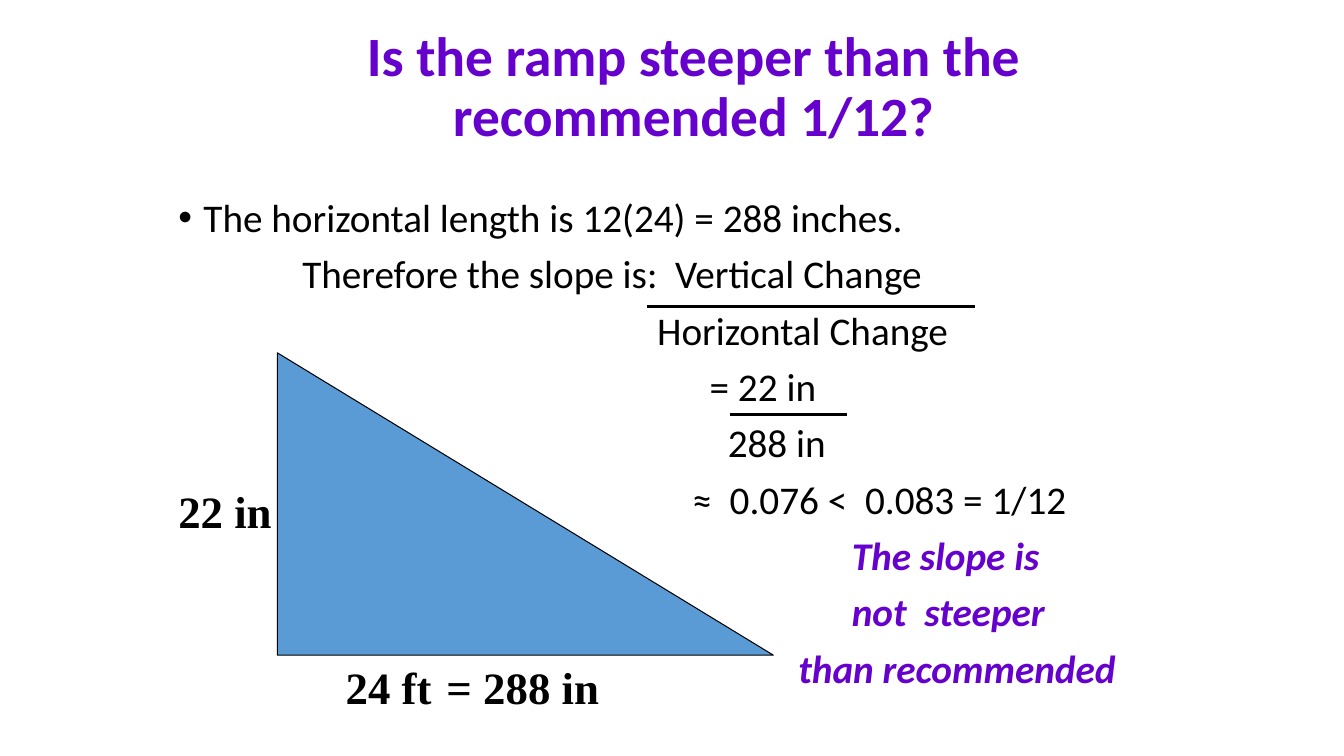
from lxml import etree
from pptx import Presentation
from pptx.dml.color import RGBColor
from pptx.enum.shapes import MSO_CONNECTOR as Connector, MSO_SHAPE as Shape
from pptx.enum.text import MSO_ANCHOR as Anchor, MSO_AUTO_SIZE as AutoSize, PP_ALIGN as Align
from pptx.oxml.ns import qn
from pptx.util import Inches, Pt

PURPLE = RGBColor(0x66, 0x00, 0xCC)
BLUE = RGBColor(0x5B, 0x9B, 0xD5)
BLACK = RGBColor(0x00, 0x00, 0x00)

WORKING = [
    (1.23, "Therefore the slope is:  Vertical Change"),
    (4.75, "Horizontal Change"),
    (5.27, "= 22 in"),
    (5.45, "288 in"),
    (5.1, "≈  0.076 <  0.083 = 1/12"),
]
CONCLUSION = [
    (6.68, "The slope is"),
    (6.68, "not  steeper"),
    (6.15, "than recommended"),
]


def set_font(paragraph, name, size, color, bold=False, italic=False):
    """Format all the text of one paragraph."""
    font = paragraph.font
    font.name, font.size = name, Pt(size)
    font.bold, font.italic = bold, italic
    font.color.rgb = color


def place_title(slide, left, top, width, height):
    """Put the question in the title placeholder."""
    title = slide.shapes.title
    title.left, title.top = Inches(left), Inches(top)
    title.width, title.height = Inches(width), Inches(height)
    frame = title.text_frame
    frame.text = "Is the ramp steeper than the recommended 1/12?"
    frame.word_wrap = True
    frame.auto_size = AutoSize.NONE
    frame.vertical_anchor = Anchor.BOTTOM
    frame.margin_bottom = Inches(0.36)
    question = frame.paragraphs[0]
    question.alignment = Align.CENTER
    question.line_spacing = 0.9
    set_font(question, "Calibri", 39.6, PURPLE, bold=True)


def add_step(paragraph, text, margin, color=BLACK, emphasis=False, bullet=False):
    """Write one indented step of the solution."""
    paragraph.text = text
    paragraph.line_spacing = 0.9
    paragraph.space_before = Pt(10)
    set_font(paragraph, "Calibri", 28, color, emphasis, emphasis)
    properties = paragraph._p.get_or_add_pPr()
    properties.set("marL", str(Inches(margin)))
    if bullet:
        properties.set("indent", str(-Inches(margin)))
        etree.SubElement(properties, qn("a:buFont")).set("typeface", "Arial")
        etree.SubElement(properties, qn("a:buChar")).set("char", "•")
        properties.append(properties.find(qn("a:defRPr")))


def add_fraction_bar(slide, left, top, width):
    """Draw the bar between a numerator and its denominator."""
    bar = slide.shapes.add_connector(
        Connector.STRAIGHT, Inches(left), Inches(top), Inches(left + width), Inches(top))
    bar.line.color.rgb = BLACK
    bar.line.width = Pt(2.5)
    etree.SubElement(bar._element.spPr, qn("a:effectLst"))


def add_solution(slide, left, top, width, height):
    """Write the slope working and its conclusion with fraction bars."""
    solution = slide.shapes.add_textbox(
        Inches(left), Inches(top), Inches(width), Inches(height))
    frame = solution.text_frame
    frame.word_wrap = True
    add_step(frame.paragraphs[0], "The horizontal length is 12(24) = 288 inches.",
             0.25, bullet=True)
    for margin, text in WORKING:
        add_step(frame.add_paragraph(), text, margin)
    for margin, text in CONCLUSION:
        add_step(frame.add_paragraph(), text, margin, PURPLE, emphasis=True)
    add_fraction_bar(slide, left + 4.75, top + 1.12, 3.25)
    add_fraction_bar(slide, left + 5.57, top + 2.19, 1.16)


def add_length(slide, text, left, top, width):
    """Label a side of the ramp with its length."""
    label = slide.shapes.add_textbox(
        Inches(left), Inches(top), Inches(width), Inches(0.63))
    frame = label.text_frame
    frame.word_wrap = True
    frame.margin_right = 0
    frame.text = text
    set_font(frame.paragraphs[0], "Times New Roman", 32, BLACK, bold=True)


def add_ramp(slide, left, top, width, height):
    """Draw the ramp as a right triangle with labelled sides."""
    ramp = slide.shapes.add_shape(
        Shape.RIGHT_TRIANGLE, Inches(left), Inches(top), Inches(width), Inches(height))
    ramp.shadow.inherit = False
    ramp.fill.solid()
    ramp.fill.fore_color.rgb = BLUE
    ramp.line.color.rgb = BLACK
    ramp.line.width = Pt(0.75)
    add_length(slide, "22 in", left - 1.08, top + 1.25, 1.13)
    add_length(slide, "24 ft", left + 0.58, top + height, 1.05)
    add_length(slide, "= 288 in", left + 1.58, top + height, 1.71)


def main():
    """Build the ramp slope slide."""
    deck = Presentation()
    deck.slide_width, deck.slide_height = Inches(13.33), Inches(7.5)
    slide = deck.slides.add_slide(deck.slide_layouts[5])
    place_title(slide, 2.42, 0.58, 8.92, 1.25)
    add_solution(slide, 1.67, 1.92, 10, 5.33)
    add_ramp(slide, 2.75, 3.5, 4.92, 3)
    deck.save("out.pptx")


if __name__ == "__main__":
    main()
